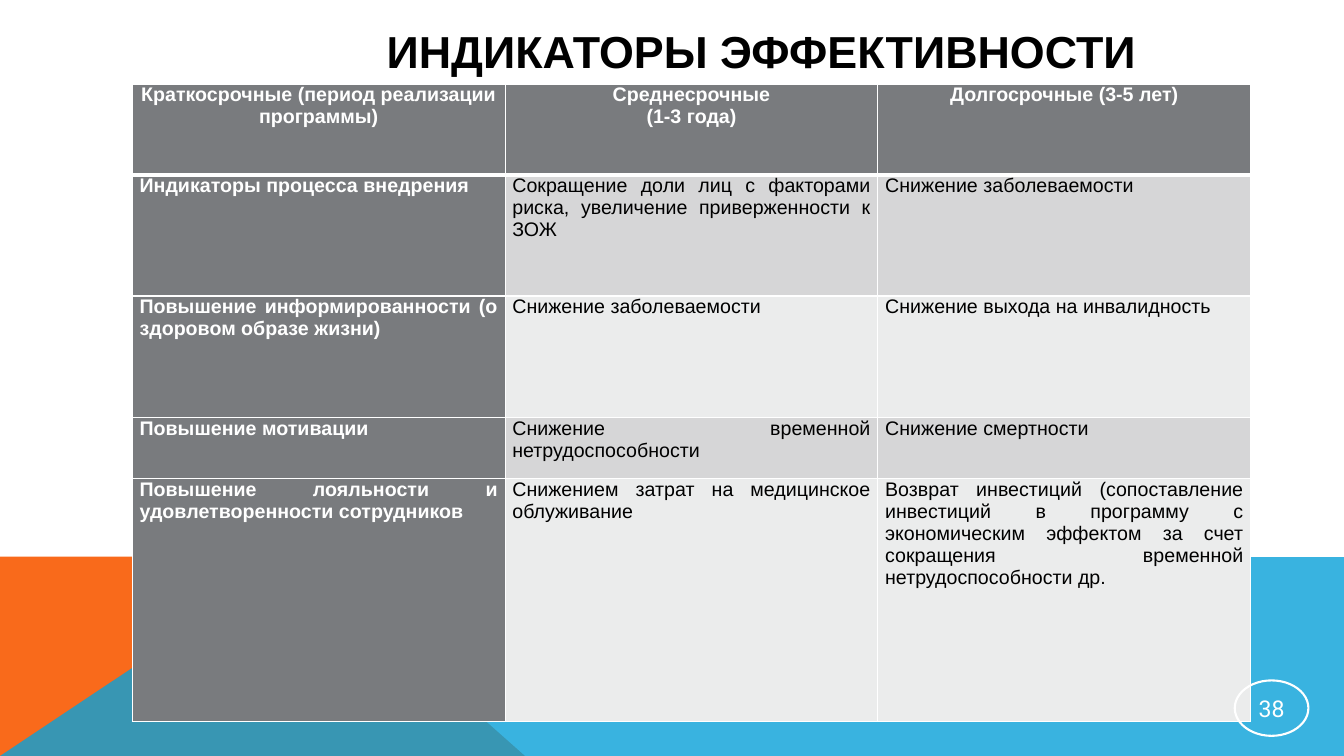
from dataclasses import dataclass

from lxml.etree import SubElement
from pptx import Presentation
from pptx.dml.color import RGBColor
from pptx.enum.shapes import MSO_SHAPE
from pptx.enum.text import MSO_ANCHOR, MSO_AUTO_SIZE, PP_ALIGN
from pptx.oxml import parse_xml
from pptx.oxml.ns import nsdecls, qn
from pptx.util import Pt

WHITE, BLACK, GREY = "FFFFFF", "000000", "797B7E"
BANDS = ("D6D6D7", "EBECEC")
LEFT, TOP, COL = 94.5, 60, 266.3
ROWS = (64.8, 86.7, 86.7, 43.4, 173.6)
CELLS = (
    ("Краткосрочные (период реализации программы)",
     "Среднесрочные\n(1-3 года)",
     "Долгосрочные (3-5 лет)"),
    ("Индикаторы процесса внедрения",
     "Сокращение доли лиц с факторами риска, увеличение приверженности к ЗОЖ",
     "Снижение заболеваемости"),
    ("Повышение информированности (о здоровом образе жизни)",
     "Снижение заболеваемости",
     "Снижение выхода на инвалидность"),
    ("Повышение мотивации",
     "Снижение временной нетрудоспособности",
     "Снижение смертности"),
    ("Повышение лояльности и удовлетворенности сотрудников",
     "Снижением затрат на медицинское облуживание",
     "Возврат инвестиций (сопоставление инвестиций в программу с экономическим "
     "эффектом за счет сокращения временной нетрудоспособности др."),
)


@dataclass
class Wedge:
    points: tuple
    color: str
    alpha: int = 100


WEDGES = (
    Wedge(((0, 540), (0, 397.5), (214.5, 397.5), (375, 540)), "F96A1B"),
    Wedge(((0, 540), (214, 397.5), (960, 398), (960, 540)), "08A1D9", 80),
)


def rgb(color: str) -> RGBColor:
    return RGBColor.from_string(color)


def paint(item, color: str) -> None:
    item.fill.solid()
    item.fill.fore_color.rgb = rgb(color)


def write(frame, text: str, *, size: float, color: str, bold: bool = False,
          font: str = "Arial", align=PP_ALIGN.CENTER) -> None:
    frame.text = text
    for para in frame.paragraphs:
        para.alignment = align
        for run in para.runs:
            run.font.size, run.font.name, run.font.bold = Pt(size), font, bold
            run.font.color.rgb = rgb(color)


def inset(item, side: float, end: float) -> None:
    item.margin_left = item.margin_right = Pt(side)
    item.margin_top = item.margin_bottom = Pt(end)


def draw_wedge(slide, wedge: Wedge) -> None:
    start, *rest = [(Pt(x), Pt(y)) for x, y in wedge.points]
    pen = slide.shapes.build_freeform(*start)
    pen.add_line_segments(rest, close=True)
    shape = pen.convert_to_shape()
    shape.shadow.inherit = False
    shape.line.fill.background()
    paint(shape, wedge.color)
    if wedge.alpha < 100:
        tint = shape.fill._xPr.find(".//" + qn("a:srgbClr"))
        SubElement(tint, qn("a:alpha"), val=str(wedge.alpha * 1000))


def edge(cell, **widths: float) -> None:
    """Draw white cell borders; keys are L, R, T and B, in that order."""
    props = cell._tc.get_or_add_tcPr()
    for spot, (side, width) in enumerate(widths.items()):
        props.insert(spot, parse_xml(
            f'<a:ln{side} {nsdecls("a")} w="{Pt(width)}"><a:solidFill>'
            f'<a:srgbClr val="{WHITE}"/></a:solidFill></a:ln{side}>'))


def draw_title(slide) -> None:
    title = slide.shapes.title
    title.left, title.top, title.width, title.height = map(Pt, (150.5, 21.6, 787, 28.8))
    frame = title.text_frame
    frame.auto_size = MSO_AUTO_SIZE.NONE
    frame.vertical_anchor = MSO_ANCHOR.MIDDLE
    write(frame, "ИНДИКАТОРЫ ЭФФЕКТИВНОСТИ", size=32, color=BLACK, bold=True)


def draw_table(slide) -> None:
    count = len(CELLS[0])
    table = slide.shapes.add_table(len(ROWS), count, Pt(LEFT), Pt(TOP),
                                   Pt(COL * count), Pt(sum(ROWS))).table
    for col in table.columns:
        col.width = Pt(COL)
    for r, texts in enumerate(CELLS):
        table.rows[r].height = Pt(ROWS[r])
        for c, text in enumerate(texts):
            cell = table.cell(r, c)
            head = r == 0 or c == 0
            inset(cell, 5.2, 0)
            paint(cell, GREY if head else BANDS[(r - 1) % 2])
            edge(cell, L=1, R=1, T=3 if r == 1 else 1, B=3 if r == 0 else 1)
            write(cell.text_frame, text, size=14, bold=head,
                  color=WHITE if head else BLACK,
                  align=PP_ALIGN.JUSTIFY if r else PP_ALIGN.CENTER)


def draw_number(slide) -> None:
    badge = slide.shapes.add_shape(MSO_SHAPE.OVAL, Pt(882), Pt(486), Pt(52.6), Pt(39.6))
    badge.shadow.inherit = False
    badge.fill.background()
    badge.line.color.rgb = rgb(WHITE)
    badge.line.width = Pt(1.5)
    frame = badge.text_frame
    inset(frame, 0.7, 0.7)
    frame.vertical_anchor = MSO_ANCHOR.MIDDLE
    write(frame, "38", size=16.5, color=WHITE, font="Roboto")


def main() -> None:
    deck = Presentation()
    deck.slide_width, deck.slide_height = Pt(960), Pt(540)
    slide = deck.slides.add_slide(deck.slide_layouts.get_by_name("Title Only"))
    for wedge in WEDGES:
        draw_wedge(slide, wedge)
    draw_title(slide)
    draw_table(slide)
    draw_number(slide)
    deck.save("out.pptx")


if __name__ == "__main__":
    main()
